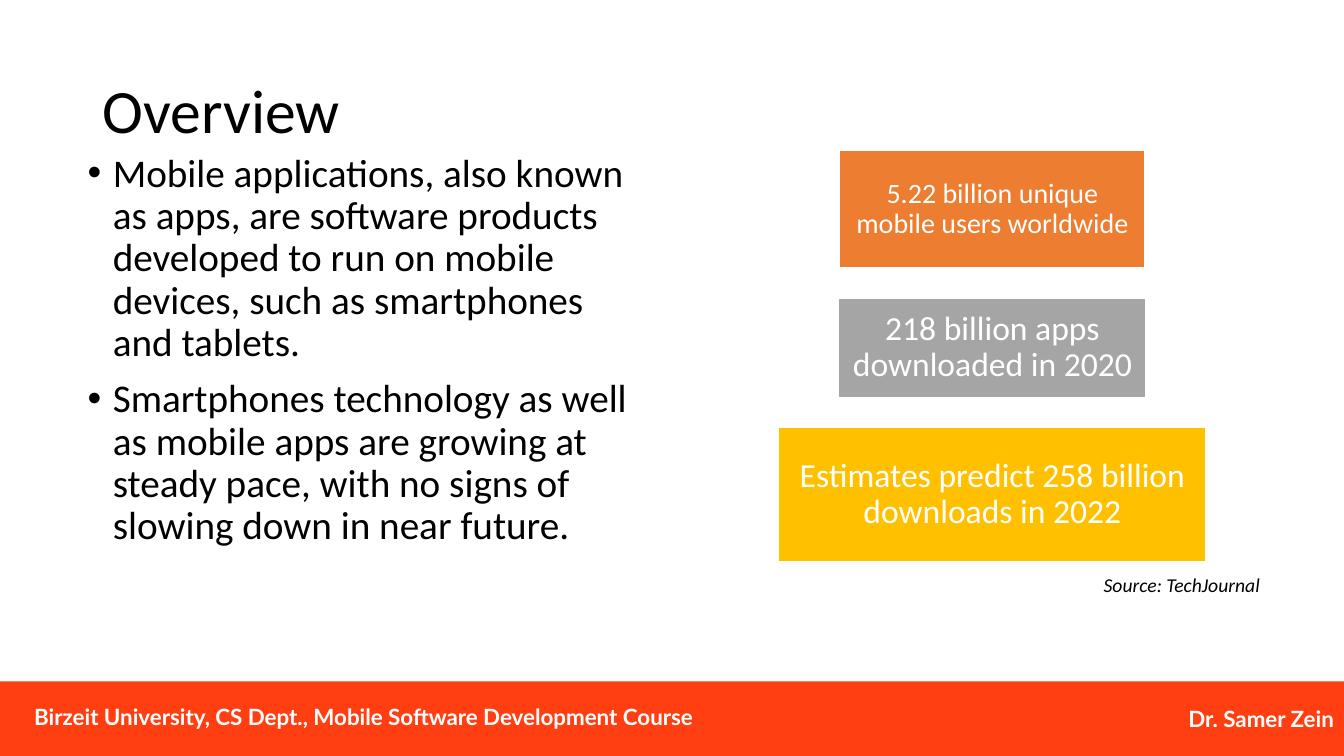
from lxml import etree
from pptx import Presentation
from pptx import util as u
from pptx.dml.color import RGBColor
from pptx.enum import shapes, text
from pptx.oxml.ns import qn

BLACK = RGBColor(0x00, 0x00, 0x00)
WHITE = RGBColor(0xFF, 0xFF, 0xFF)
RED = RGBColor(0xFF, 0x3E, 0x11)
ORANGE = RGBColor(0xED, 0x7D, 0x31)
GRAY = RGBColor(0xA5, 0xA5, 0xA5)
GOLD = RGBColor(0xFF, 0xC0, 0x00)

LEFT, CENTER, RIGHT = text.PP_ALIGN.LEFT, text.PP_ALIGN.CENTER, text.PP_ALIGN.RIGHT
TOP, MIDDLE = text.MSO_ANCHOR.TOP, text.MSO_ANCHOR.MIDDLE


def apply(target, values):
    for name, value in values.items():
        setattr(target, name, value)


class Page:
    """Holds the fonts and the current slide, and adds its elements."""

    def __init__(self, slide, main_font, footer_font):
        self.slide = slide
        self.main_font = main_font
        self.footer_font = footer_font

    def fill_paragraph(self, paragraph, wording, color, font, layout):
        paragraph.text = wording
        apply(paragraph, layout)
        apply(paragraph.font, {"name": self.main_font, **font})
        paragraph.font.color.rgb = color

    def place(self, holder, box):
        apply(holder, dict(zip(("left", "top", "width", "height"), map(u.Pt, box))))

    def title(self, wording, box):
        heading = self.slide.shapes.title
        self.place(heading, box)
        apply(heading.text_frame, {"vertical_anchor": MIDDLE, "auto_size": text.MSO_AUTO_SIZE.NONE})
        self.fill_paragraph(heading.text_frame.paragraphs[0], wording, BLACK,
                            {"size": u.Pt(44)}, {"alignment": LEFT, "line_spacing": 0.9})

    def bullets(self, items, box):
        body = self.slide.placeholders[1]
        self.place(body, box)
        frame = body.text_frame
        apply(frame, {"vertical_anchor": TOP, "auto_size": text.MSO_AUTO_SIZE.NONE})
        for index, item in enumerate(items):
            point = frame.add_paragraph() if index else frame.paragraphs[0]
            properties = point._p.get_or_add_pPr()
            properties.set("marL", str(u.Pt(18)))
            properties.set("indent", str(-u.Pt(18)))
            etree.SubElement(properties, qn("a:buFont")).set("typeface", "Arial")
            etree.SubElement(properties, qn("a:buChar")).set("char", "•")
            self.fill_paragraph(point, item, BLACK, {"size": u.Pt(28)},
                                {"alignment": LEFT, "line_spacing": 0.9,
                                 "space_before": u.Pt(10 if index else 0)})

    def panel(self, wording, box, fill, font, layout, inset, border=None):
        block = self.slide.shapes.add_shape(shapes.MSO_SHAPE.RECTANGLE, *map(u.Pt, box))
        block.shadow.inherit = False
        block.fill.solid()
        block.fill.fore_color.rgb = fill
        if border is None:
            block.line.fill.background()
        else:
            block.line.color.rgb = border
            block.line.width = u.Pt(1)
        sides = ("margin_left", "margin_top", "margin_right", "margin_bottom")
        apply(block.text_frame, {"word_wrap": True, "vertical_anchor": MIDDLE,
                                 **dict.fromkeys(sides, u.Pt(inset))})
        self.fill_paragraph(block.text_frame.paragraphs[0], wording, WHITE, font, layout)

    def label(self, wording, box, color, font):
        frame = self.slide.shapes.add_textbox(*map(u.Pt, box)).text_frame
        apply(frame, {"word_wrap": False, "auto_size": text.MSO_AUTO_SIZE.SHAPE_TO_FIT_TEXT})
        self.fill_paragraph(frame.paragraphs[0], wording, color, font, {"alignment": LEFT})


def main():
    deck = Presentation()
    apply(deck, {"slide_width": u.Pt(960), "slide_height": u.Pt(540)})
    page = Page(deck.slides.add_slide(deck.slide_layouts[1]), "Calibri", "Lato")

    page.title("Overview", (66.2, 28.8, 828, 104.4))
    page.bullets([
        "Mobile applications, also known as apps, are software products developed "
        "to run on mobile devices, such as smartphones and tablets.",
        "Smartphones technology as well as mobile apps are growing at steady pace, "
        "with no signs of slowing down in near future.",
    ], (55.4, 105.8, 403.2, 342.7))

    footer_font = {"name": page.footer_font, "size": u.Pt(16), "bold": True}
    page.panel("Dr. Samer Zein", (0, 486.7, 960, 53.3), RED, footer_font,
               {"alignment": RIGHT}, 7.2)
    page.label("Birzeit University, CS Dept., Mobile Software Development Course",
               (17.3, 499, 490.3, 26.6), WHITE, footer_font)

    facts_center, fact_top, fact_gap = 708.9, 107.3, 21.3
    facts = [
        ("5.22 billion unique mobile users worldwide", 218.2, 84.2, ORANGE, 20, 4.3),
        ("218 billion apps downloaded in 2020", 219.6, 71.3, GRAY, 24, 5),
        ("Estimates predict 258 billion downloads in 2022", 305.3, 95.8, GOLD, 24, 5),
    ]
    for wording, width, height, fill, size, inset in facts:
        page.panel(wording, (facts_center - width / 2, fact_top, width, height), fill,
                   {"size": u.Pt(size)}, {"alignment": CENTER, "line_spacing": 0.9},
                   inset, WHITE)
        fact_top += height + fact_gap

    page.label("Source: TechJournal", (781.2, 405.4, 127.4, 24.5), BLACK,
               {"size": u.Pt(14), "italic": True})
    deck.save("out.pptx")


if __name__ == "__main__":
    main()
